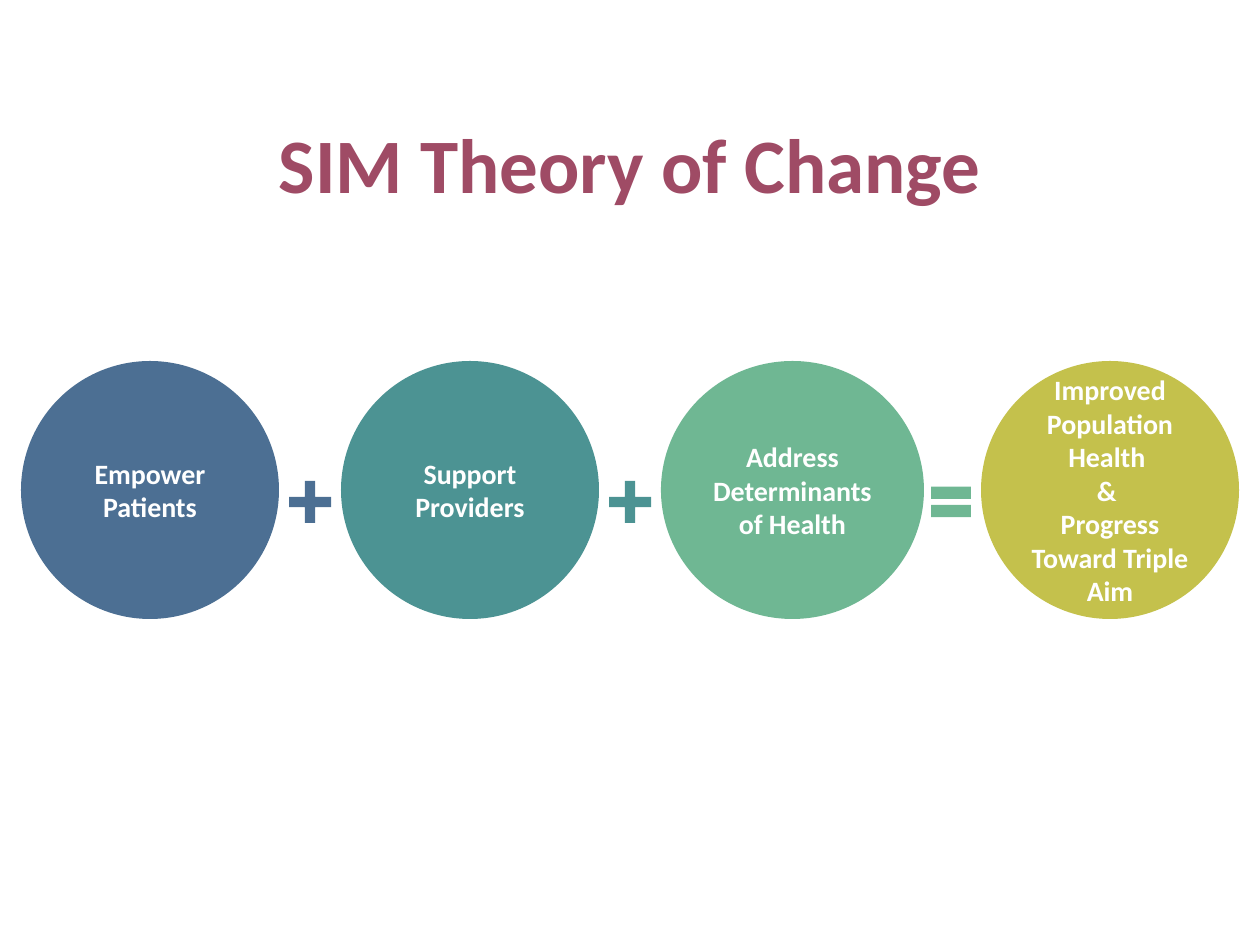
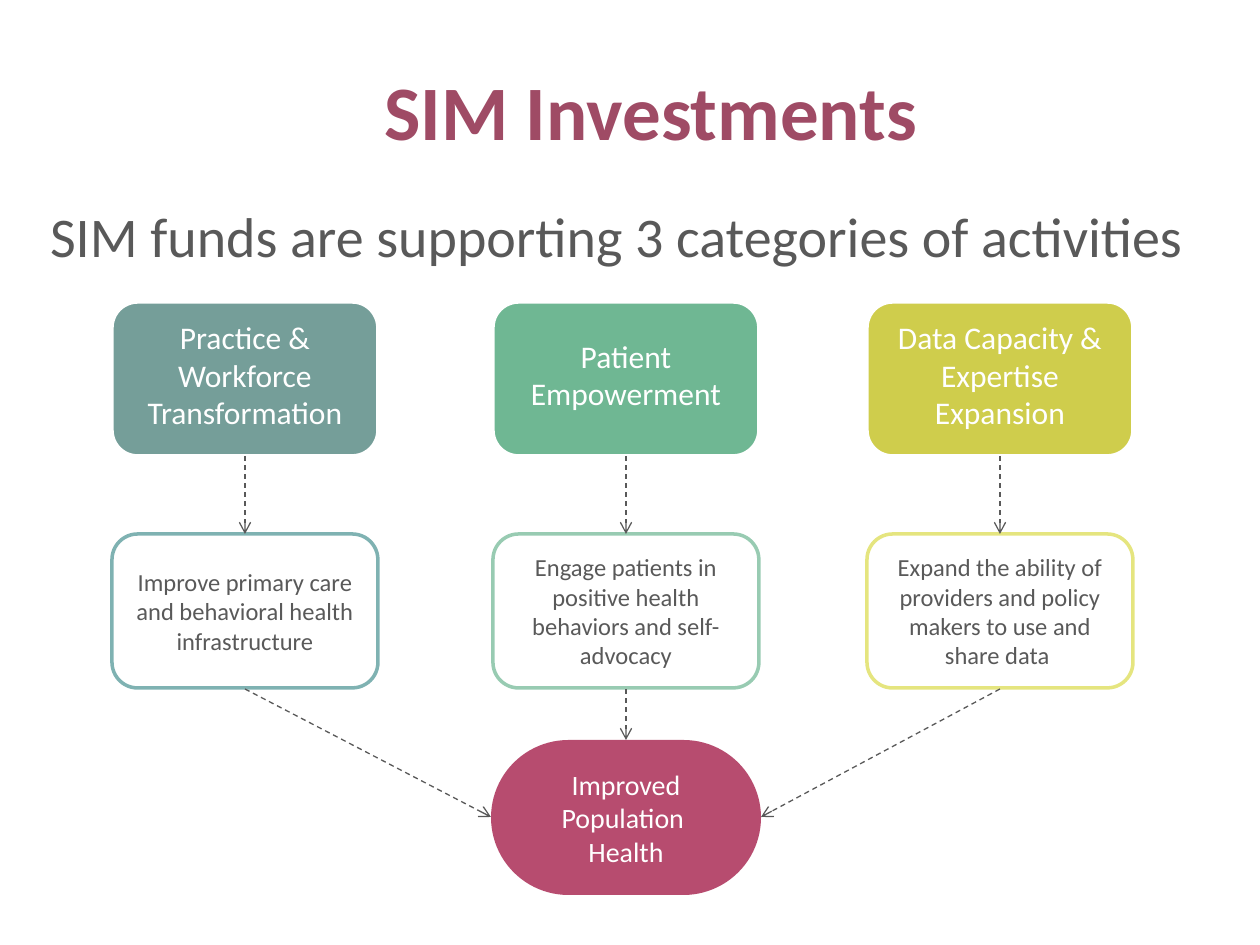
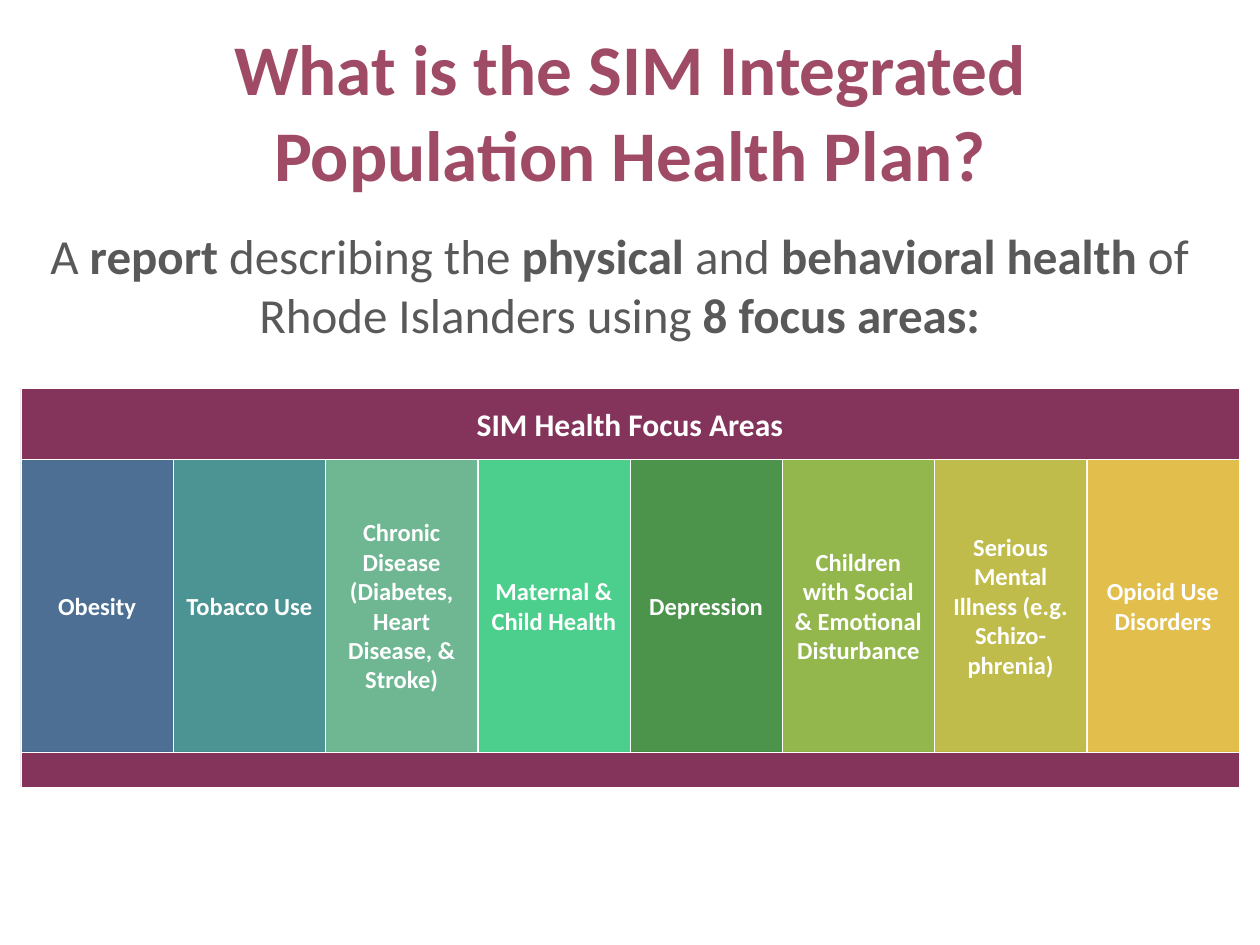
from dataclasses import dataclass

from lxml.etree import SubElement
from pptx import Presentation
from pptx.dml.color import RGBColor
from pptx.enum.dml import MSO_LINE
from pptx.enum.shapes import MSO_CONNECTOR, MSO_SHAPE
from pptx.enum.text import MSO_ANCHOR, PP_ALIGN
from pptx.oxml.ns import qn
from pptx.util import Emu, Pt


@dataclass(frozen=True)
class Theme:
    """Colours, opacities and type sizes of the deck."""
    font: str = "Calibri"
    title: str = "9F4B65"
    body: str = "595959"
    white: str = "FFFFFF"
    navy: str = "003366"
    teal: str = "006666"
    green: str = "339966"
    olive: str = "ACA800"
    sage: str = "3B756F"
    lime: str = "BCB800"
    yellow: str = "CCCC00"
    crimson: str = "990033"
    plum: str = "660033"
    mint: str = "00BC5E"
    forest: str = "006600"
    leaf: str = "669900"
    moss: str = "A4A000"
    gold: str = "D6A300"
    opacity: int = 70
    band_opacity: int = 80
    outline_opacity: int = 50
    title_size: float = 44
    long_title_size: float = 40.7
    lead_size: float = 32
    summary_size: float = 28
    heading_size: float = 18
    label_size: float = 16
    detail_size: float = 14


THEME = Theme()
INSETS = (12, 6, 12, 6)


def px(length):
    """Turn pixels into EMU at 126 pixels to the inch."""
    return Emu(round(length * 914400 / 126))


def set_opacity(parent, percent):
    """Make the colour inside a fill or line element partly transparent."""
    color = next(parent.iter(qn("a:srgbClr")))
    SubElement(color, qn("a:alpha"), val=str(percent * 1000))


def write(shape, paragraphs, size, color, bold=False, align=PP_ALIGN.CENTER,
          anchor=MSO_ANCHOR.MIDDLE, insets=INSETS):
    """Fill a shape with paragraphs, each a string or a list of (text, bold) runs."""
    frame = shape.text_frame
    frame.word_wrap = True
    frame.vertical_anchor = anchor
    frame.margin_left, frame.margin_top, frame.margin_right, frame.margin_bottom = map(px, insets)
    for index, content in enumerate(paragraphs):
        paragraph = frame.add_paragraph() if index else frame.paragraphs[0]
        paragraph.alignment = align
        font = paragraph.font
        font.name, font.size, font.bold = THEME.font, Pt(size), bold
        font.color.rgb = RGBColor.from_string(color)
        if isinstance(content, str):
            content = [(content, None)]
        for text, run_bold in content:
            run = paragraph.add_run()
            run.text = text
            run.font.bold = run_bold


def add_text(slide, box, paragraphs, size, color, **style):
    """Add a text box."""
    write(slide.shapes.add_textbox(*map(px, box)), paragraphs, size, color, **style)


def add_title(slide, box, text, size=THEME.title_size):
    """Add a slide title."""
    add_text(slide, box, [text], size, THEME.title, bold=True)


def add_figure(slide, kind, box, fill=None, opacity=THEME.opacity, line=None,
               line_width=2, line_opacity=100, adjustment=None):
    """Add a preset shape with a translucent fill and an optional outline."""
    shape = slide.shapes.add_shape(kind, *map(px, box))
    shape.shadow.inherit = False
    properties = shape._element.spPr
    if adjustment is not None:
        shape.adjustments[0] = adjustment
    if fill:
        shape.fill.solid()
        shape.fill.fore_color.rgb = RGBColor.from_string(fill)
        set_opacity(properties.find(qn("a:solidFill")), opacity)
    else:
        shape.fill.background()
    if line:
        shape.line.width = Pt(line_width)
        shape.line.color.rgb = RGBColor.from_string(line)
        set_opacity(properties.find(qn("a:ln")), line_opacity)
    else:
        shape.line.fill.background()
    return shape


def add_arrow(slide, start, end):
    """Add a thin dashed arrow between two points."""
    arrow = slide.shapes.add_connector(MSO_CONNECTOR.STRAIGHT, *map(px, (*start, *end)))
    arrow.line.color.rgb = RGBColor.from_string(THEME.body)
    arrow.line.width = Pt(0.75)
    arrow.line.dash_style = MSO_LINE.DASH
    properties = arrow._element.spPr
    SubElement(properties.find(qn("a:ln")), qn("a:tailEnd"), type="arrow")
    SubElement(properties, qn("a:effectLst"))


def add_equation(slide, box):
    """Draw the circles of the sum, each followed by its operator."""
    left, top, width, height = box
    terms = [
        (["Empower Patients"], THEME.navy, 258),
        (["Support Providers"], THEME.teal, 258),
        (["Address Determinants of Health"], THEME.green, 263),
        (["Improved Population Health ", "& ", "Progress Toward Triple Aim"], THEME.olive, 258),
    ]
    pitch = (width - height) / (len(terms) - 1)
    for index, (paragraphs, color, diameter) in enumerate(terms):
        x = left + index * pitch
        circle = add_figure(slide, MSO_SHAPE.OVAL, (x, top, diameter, height), color)
        write(circle, paragraphs, THEME.label_size, THEME.white, bold=True, insets=(5, 5, 5, 5))
        if index < 2:
            add_figure(slide, MSO_SHAPE.CROSS, (x + 268, top + 120, 42, 42), color,
                       adjustment=0.38)
        elif index == 2:
            add_figure(slide, MSO_SHAPE.MATH_EQUAL, (x + 263, top + 115, 54, 52), color)


def add_investments(slide, box):
    """Draw three category columns that lead to one outcome."""
    left, top, width, height = box
    card_width, card_height, detail_top = 266, 154, top + 232
    outcome_left, outcome_top, outcome_width = left + 379, top + height - 155, 270
    outcome_middle = outcome_top + 77
    columns = [
        (0, "Practice & Workforce Transformation", THEME.sage,
         "Improve primary care and behavioral health infrastructure", THEME.teal,
         (outcome_left, outcome_middle)),
        (381, "Patient Empowerment", THEME.green,
         "Engage patients in positive health behaviors and self-advocacy", THEME.green,
         (outcome_left + outcome_width / 2, outcome_top)),
        (width - card_width, "Data Capacity & Expertise Expansion", THEME.lime,
         "Expand the ability of providers and policy makers to use and share data ",
         THEME.yellow, (outcome_left + outcome_width, outcome_middle)),
    ]
    for offset, heading, fill, detail, outline, target in columns:
        x = left + offset
        center = x + card_width / 2
        card = add_figure(slide, MSO_SHAPE.ROUNDED_RECTANGLE,
                          (x, top, card_width, card_height), fill, line=THEME.white)
        write(card, [heading], THEME.heading_size, THEME.white, insets=(12, 6, 12, 15))
        card = add_figure(slide, MSO_SHAPE.ROUNDED_RECTANGLE,
                          (x, detail_top, card_width, card_height), line=outline,
                          line_opacity=THEME.outline_opacity)
        write(card, [detail], THEME.detail_size, THEME.body, insets=(9, 4, 9, 4))
        add_arrow(slide, (center, top + card_height), (center, detail_top))
        add_arrow(slide, (center, detail_top + card_height + 1), target)
    outcome = add_figure(slide, MSO_SHAPE.ROUNDED_RECTANGLE,
                         (outcome_left, outcome_top, outcome_width, 155),
                         THEME.crimson, adjustment=0.5)
    write(outcome, ["Improved Population ", "Health"], THEME.label_size, THEME.white)


def add_focus_areas(slide, box):
    """Draw the focus area columns between a header band and a footer band."""
    left, top, width, height = box
    header_height, footer_height = 71, 35
    areas = [
        ("Obesity", THEME.navy),
        ("Tobacco Use", THEME.teal),
        ("Chronic Disease (Diabetes, Heart Disease, & Stroke)", THEME.green),
        ("Maternal & Child Health", THEME.mint),
        ("Depression", THEME.forest),
        ("Children with Social & Emotional Disturbance", THEME.leaf),
        ("Serious Mental Illness (e.g. Schizo-phrenia)", THEME.moss),
        ("Opioid Use Disorders", THEME.gold),
    ]

    def add_cell(cell_box, fill, opacity=THEME.opacity):
        """Add one rectangle with a hairline white border."""
        return add_figure(slide, MSO_SHAPE.RECTANGLE, cell_box, fill, opacity,
                          THEME.white, 0.25)

    header = add_cell((left, top, width, header_height), THEME.plum, THEME.band_opacity)
    write(header, ["SIM Health Focus Areas"], THEME.heading_size, THEME.white, bold=True)
    add_cell((left, top + height - footer_height, width, footer_height),
             THEME.plum, THEME.band_opacity)
    column_width = width / len(areas)
    for index, (name, color) in enumerate(areas):
        cell = add_cell((left + index * column_width, top + header_height, column_width,
                         height - header_height - footer_height), color)
        write(cell, [name], THEME.detail_size, THEME.white, bold=True)


def build_theory(slide):
    """Build the theory of change slide."""
    add_title(slide, (63, 84, 1134, 158), "SIM Theory of Change")
    add_equation(slide, (21, 361, 1218, 258))


def build_investments(slide):
    """Build the investments slide."""
    add_text(slide, (38, 195, 1176, 624),
             ["SIM funds are supporting 3 categories of activities"], THEME.lead_size,
             THEME.body, align=PP_ALIGN.LEFT, anchor=MSO_ANCHOR.TOP)
    add_title(slide, (84, 31, 1134, 158), "SIM Investments")
    add_investments(slide, (112, 302, 1021, 593))


def build_health_plan(slide):
    """Build the population health plan slide."""
    summary = [("A", False), (" report ", True), ("describing the ", False),
               ("physical", True), (" and ", False), ("behavioral health ", True),
               ("of Rhode Islanders using ", False), ("8 focus areas:", True)]
    add_text(slide, (0, 220, 1239, 325), [summary], THEME.summary_size, THEME.body,
             anchor=MSO_ANCHOR.TOP)
    add_title(slide, (63, 31, 1134, 158),
              "What is the SIM Integrated Population Health Plan?", THEME.long_title_size)
    add_focus_areas(slide, (21, 388, 1218, 399))


def main():
    """Build and save the deck."""
    presentation = Presentation()
    presentation.slide_width, presentation.slide_height = px(1260), px(945)
    for build in (build_theory, build_investments, build_health_plan):
        build(presentation.slides.add_slide(presentation.slide_layouts[6]))
    presentation.save("out.pptx")


if __name__ == "__main__":
    main()
